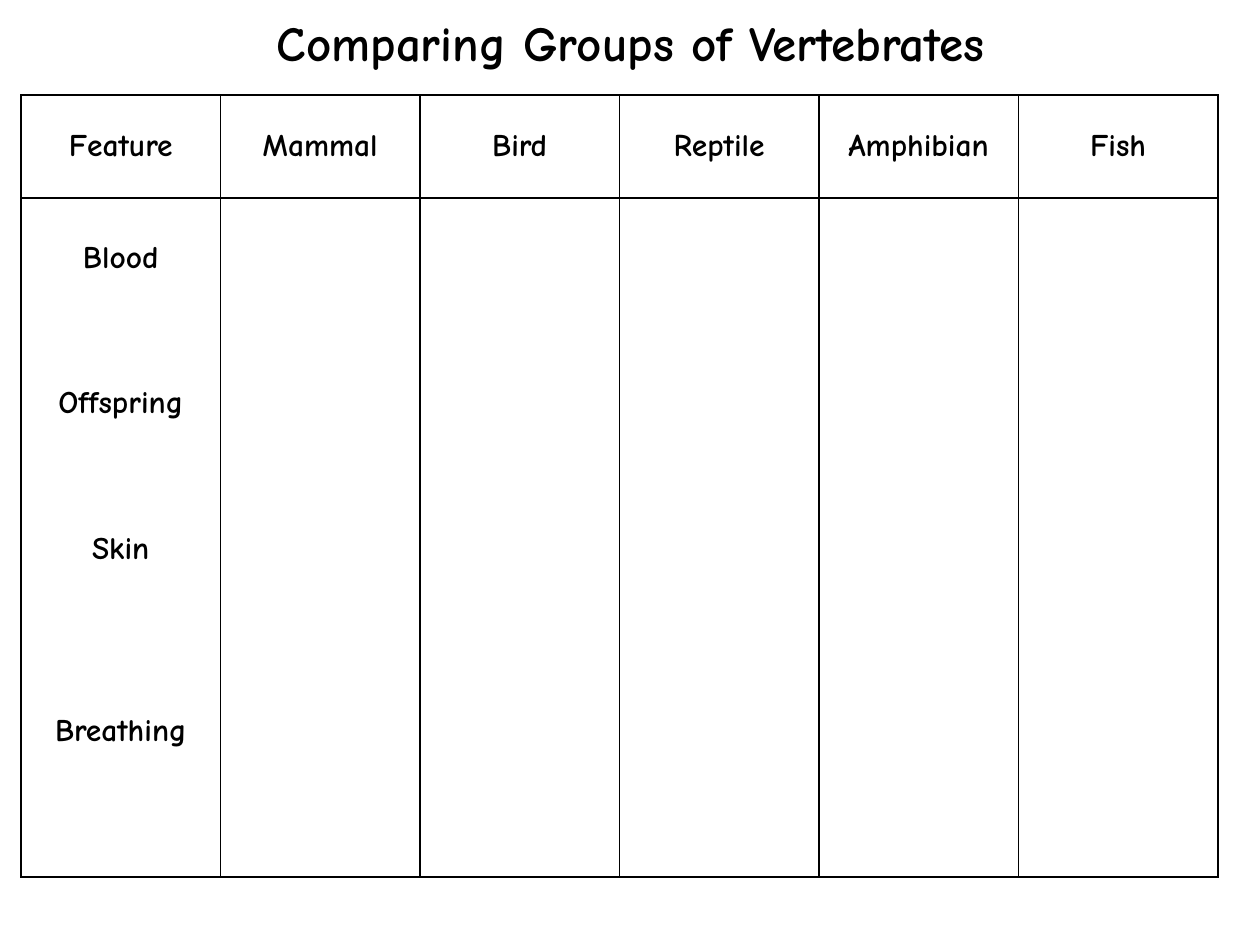
from lxml import etree
from pptx import Presentation
from pptx.dml.color import RGBColor
from pptx.enum.text import MSO_ANCHOR, MSO_AUTO_SIZE, PP_ALIGN
from pptx.oxml.ns import qn
from pptx.util import Pt

PX = 914400 / 126
BLACK = RGBColor(0, 0, 0)
FONT = "Comic Neue"
MIDDLE = MSO_ANCHOR.MIDDLE
TOP = MSO_ANCHOR.TOP
CENTER = PP_ALIGN.CENTER
NO_AUTOFIT = MSO_AUTO_SIZE.NONE

TITLE_BOX = (95, 0, 1071, 84)
TABLE_BOX = (21, 95, 1197, 782)
HEADER_HEIGHT = 103
BODY_TOP_MARGIN = 42
LINE_HEIGHT = 20.8
HEADINGS = ["Feature", "Mammal", "Bird", "Reptile", "Amphibian", "Fish"]
FEATURES = [("Blood", 0), ("Offspring", 3), ("Skin", 3), ("Breathing", 4)]


def emu(px):
    return round(px * PX)


def format_paragraph(para, size):
    para.alignment = CENTER
    para.font.name = FONT
    para.font.size = Pt(size)
    para.font.bold = True
    para.font.color.rgb = BLACK


def add_borders(cell):
    properties = cell._tc.get_or_add_tcPr()
    for index, side in enumerate(("a:lnL", "a:lnR", "a:lnT", "a:lnB")):
        line = etree.Element(qn(side), w=str(Pt(1)))
        fill = etree.SubElement(line, qn("a:solidFill"))
        etree.SubElement(fill, qn("a:srgbClr"), val=str(BLACK))
        properties.insert(index, line)


def add_title(page, box):
    title = page.shapes.title
    title.left, title.top, title.width, title.height = map(emu, box)
    frame = title.text_frame
    frame.text = "Comparing Groups of Vertebrates"
    frame.auto_size = NO_AUTOFIT
    frame.vertical_anchor = MIDDLE
    format_paragraph(frame.paragraphs[0], 28)


def fill_features(cell):
    cell.vertical_anchor = TOP
    cell.margin_top = emu(BODY_TOP_MARGIN)
    frame = cell.text_frame
    for index, (feature, gap_lines) in enumerate(FEATURES):
        para = frame.add_paragraph() if index else frame.paragraphs[0]
        para.text = feature
        para.space_before = Pt(gap_lines * LINE_HEIGHT)
        format_paragraph(para, 18)


def add_comparison_table(page, box):
    left, top, width, height = box
    table = page.shapes.add_table(
        2, len(HEADINGS), emu(left), emu(top), emu(width), emu(height)
    ).table
    table.first_row = False
    table.horz_banding = False
    table.rows[0].height = emu(HEADER_HEIGHT)
    table.rows[1].height = emu(height - HEADER_HEIGHT)
    for cell in table.iter_cells():
        cell.fill.background()
        add_borders(cell)
    for column, heading in enumerate(HEADINGS):
        table.columns[column].width = emu(width / len(HEADINGS))
        cell = table.cell(0, column)
        cell.text = heading
        cell.vertical_anchor = MIDDLE
        format_paragraph(cell.text_frame.paragraphs[0], 18)
    fill_features(table.cell(1, 0))


def main():
    deck = Presentation()
    deck.slide_width = emu(1260)
    deck.slide_height = emu(945)
    page = deck.slides.add_slide(deck.slide_layouts[0])
    subtitle = page.placeholders[1].element
    subtitle.getparent().remove(subtitle)
    add_title(page, TITLE_BOX)
    add_comparison_table(page, TABLE_BOX)
    deck.save("out.pptx")


if __name__ == "__main__":
    main()
